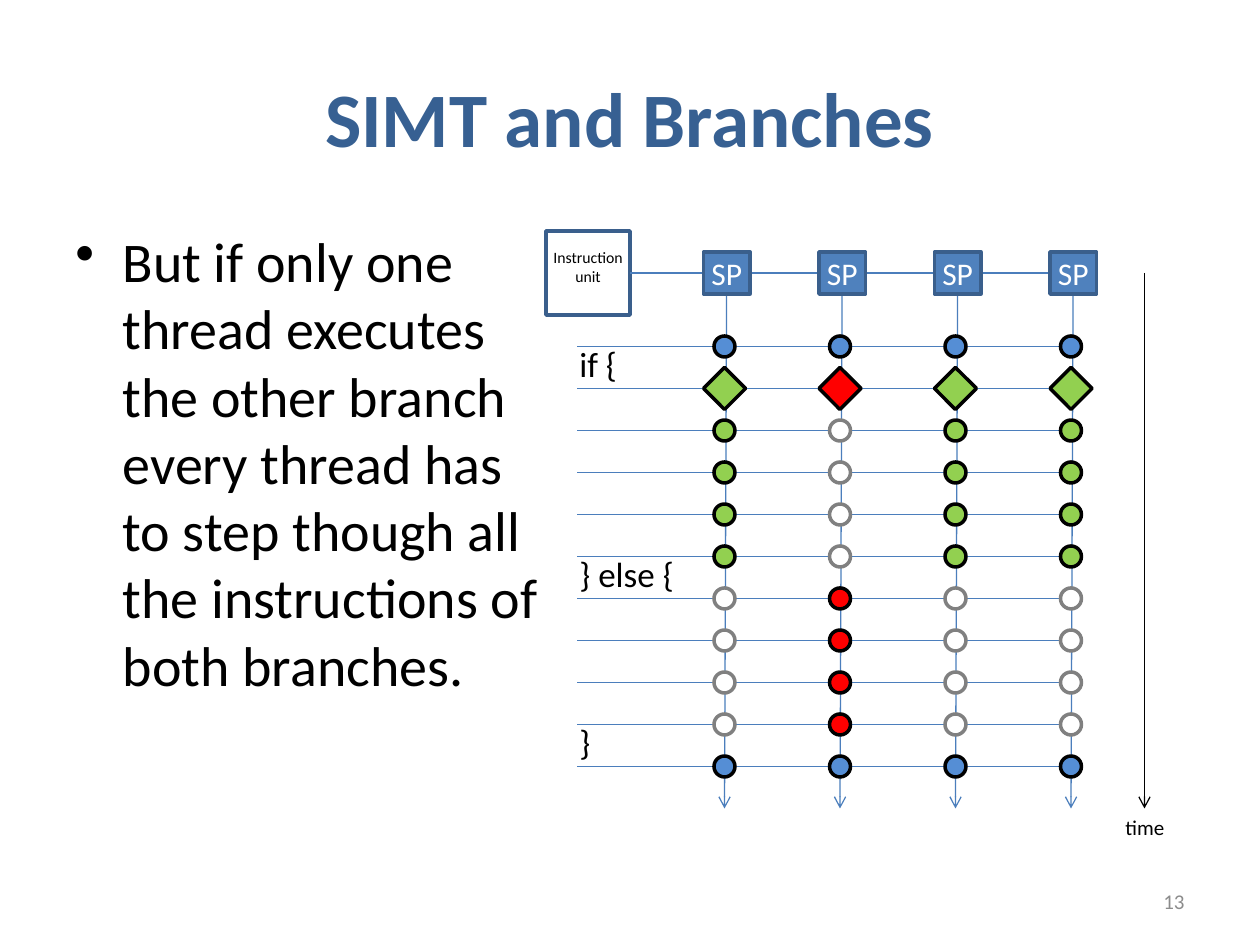
from lxml import etree
from pptx import Presentation
from pptx import util as u
from pptx.dml.color import RGBColor
from pptx.enum import shapes, text
from pptx.oxml import ns

BLACK = RGBColor(0x00, 0x00, 0x00)
WHITE = RGBColor(0xFF, 0xFF, 0xFF)
GREY = RGBColor(0x80, 0x80, 0x80)
PALE_GREY = RGBColor(0x8C, 0x8C, 0x8C)
TITLE_BLUE = RGBColor(0x37, 0x60, 0x92)
UNIT_BLUE = RGBColor(0x4F, 0x81, 0xBD)
EDGE_BLUE = RGBColor(0x3A, 0x5F, 0x8C)
WIRE_BLUE = RGBColor(0x4B, 0x7E, 0xBC)
STEP_BLUE = RGBColor(0x55, 0x8E, 0xD5)
GREEN = RGBColor(0x92, 0xD0, 0x50)
RED = RGBColor(0xFF, 0x00, 0x00)

LEFT, CENTER, RIGHT = text.PP_ALIGN.LEFT, text.PP_ALIGN.CENTER, text.PP_ALIGN.RIGHT
TOP, MIDDLE = text.MSO_ANCHOR.TOP, text.MSO_ANCHOR.MIDDLE
RECTANGLE = shapes.MSO_SHAPE.RECTANGLE
DIAMOND = shapes.MSO_SHAPE.DIAMOND
CIRCLE = shapes.MSO_SHAPE.OVAL

THREAD_X = [414 + 66 * thread for thread in range(4)]
STEP_Y = [198 + 24 * step for step in range(11)]
BRANCH_STEP = 1
IF_STEPS = range(2, 6)
ELSE_STEPS = range(6, 10)
ELSE_THREAD = 1


class SlideBuilder:
    font = "Calibri"
    outline = 2
    wire = 0.75

    def __init__(self, page):
        self.page = page

    def set_words(self, paragraph, words, size, color, align, bold=False):
        paragraph.text = words
        paragraph.alignment = align
        paragraph.font.name = self.font
        paragraph.font.size = u.Pt(size)
        paragraph.font.bold = bold
        paragraph.font.color.rgb = color

    def label(self, words, area, size, color=BLACK, align=LEFT, anchor=TOP, bold=False):
        box = self.page.shapes.add_textbox(*map(u.Pt, area))
        box.text_frame.word_wrap = True
        box.text_frame.vertical_anchor = anchor
        paragraph = box.text_frame.paragraphs[0]
        self.set_words(paragraph, words, size, color, align, bold)
        return paragraph

    def bullet(self, words, area, size, indent):
        paragraph = self.label(words, area, size)
        paragraph.space_before = u.Pt(size * 0.2)
        properties = paragraph._p.get_or_add_pPr()
        properties.set("marL", str(u.Pt(indent)))
        properties.set("indent", str(u.Pt(-indent)))
        mark = etree.Element(ns.qn("a:buChar"), char="•")
        properties.find(ns.qn("a:defRPr")).addprevious(mark)

    def shape(self, kind, area, fill, edge, words=""):
        shape = self.page.shapes.add_shape(kind, *map(u.Pt, area))
        shape.shadow.inherit = False
        shape.fill.solid()
        shape.fill.fore_color.rgb = fill
        shape.line.color.rgb = edge
        shape.line.width = u.Pt(self.outline)
        if words:
            frame = shape.text_frame
            frame.margin_left = frame.margin_right = 0
            frame.margin_top = frame.margin_bottom = 0
            frame.vertical_anchor = MIDDLE
            self.set_words(frame.paragraphs[0], words, 18, WHITE, CENTER)

    def node(self, kind, x, y, size, fill, edge=BLACK):
        self.shape(kind, (x - size / 2, y - size / 2, size, size), fill, edge)

    def line(self, start, end, color=WIRE_BLUE, arrow=False):
        line = self.page.shapes.add_connector(
            shapes.MSO_CONNECTOR.STRAIGHT, *map(u.Pt, start + end))
        line.line.color.rgb = color
        line.line.width = u.Pt(self.wire)
        properties = line._element.spPr
        if arrow:
            outline = properties.find(ns.qn("a:ln"))
            etree.SubElement(outline, ns.qn("a:tailEnd"), type="arrow")
        etree.SubElement(properties, ns.qn("a:effectLst"))


def draw_step(builder, thread, step):
    x, y = THREAD_X[thread], STEP_Y[step]
    takes_else = thread == ELSE_THREAD
    branch_color = RED if takes_else else GREEN
    if step == BRANCH_STEP:
        builder.node(DIAMOND, x, y, 24, branch_color)
    elif step not in IF_STEPS and step not in ELSE_STEPS:
        builder.node(CIRCLE, x, y, 12, STEP_BLUE)
    elif takes_else == (step in ELSE_STEPS):
        builder.node(CIRCLE, x, y, 12, branch_color)
    else:
        builder.node(CIRCLE, x, y, 12, WHITE, GREY)


def main():
    deck = Presentation()
    deck.slide_width, deck.slide_height = u.Pt(720), u.Pt(540)
    builder = SlideBuilder(deck.slides.add_slide(deck.slide_layouts[6]))

    builder.label("SIMT and Branches", (36, 21.6, 648, 90), 44,
                  TITLE_BLUE, CENTER, MIDDLE, bold=True)
    builder.bullet("But if only one \vthread executes\vthe other branch\v"
                   "every thread has\vto step though all\vthe instructions of\v"
                   "both branches.", (36, 126, 648, 356.4), 32, 27)

    builder.shape(RECTANGLE, (312, 132, 48, 48), WHITE, EDGE_BLUE)
    builder.label("Instruction unit", (306, 138, 60, 29), 9, align=CENTER)
    builder.line((360, 156), (626, 156))
    for x in THREAD_X:
        builder.line((x + 1.2, 168), (x, 462), arrow=True)
        builder.shape(RECTANGLE, (x - 12, 144, 26.6, 24), UNIT_BLUE, EDGE_BLUE, "SP")

    for step, y in enumerate(STEP_Y):
        builder.line((330, y), (THREAD_X[-1], y))
        for thread in range(len(THREAD_X)):
            draw_step(builder, thread, step)

    for words, top in (("if {", 192), ("} else {", 312), ("}", 408)):
        builder.label(words, (324, top, 78, 31.5), 20)

    builder.line((654, 156), (654, 462), BLACK, arrow=True)
    builder.label("time", (636, 462, 48, 21.6), 12)
    builder.label("13", (516, 500.5, 168, 28.8), 12, PALE_GREY, RIGHT, MIDDLE)

    deck.save("out.pptx")


if __name__ == "__main__":
    main()
